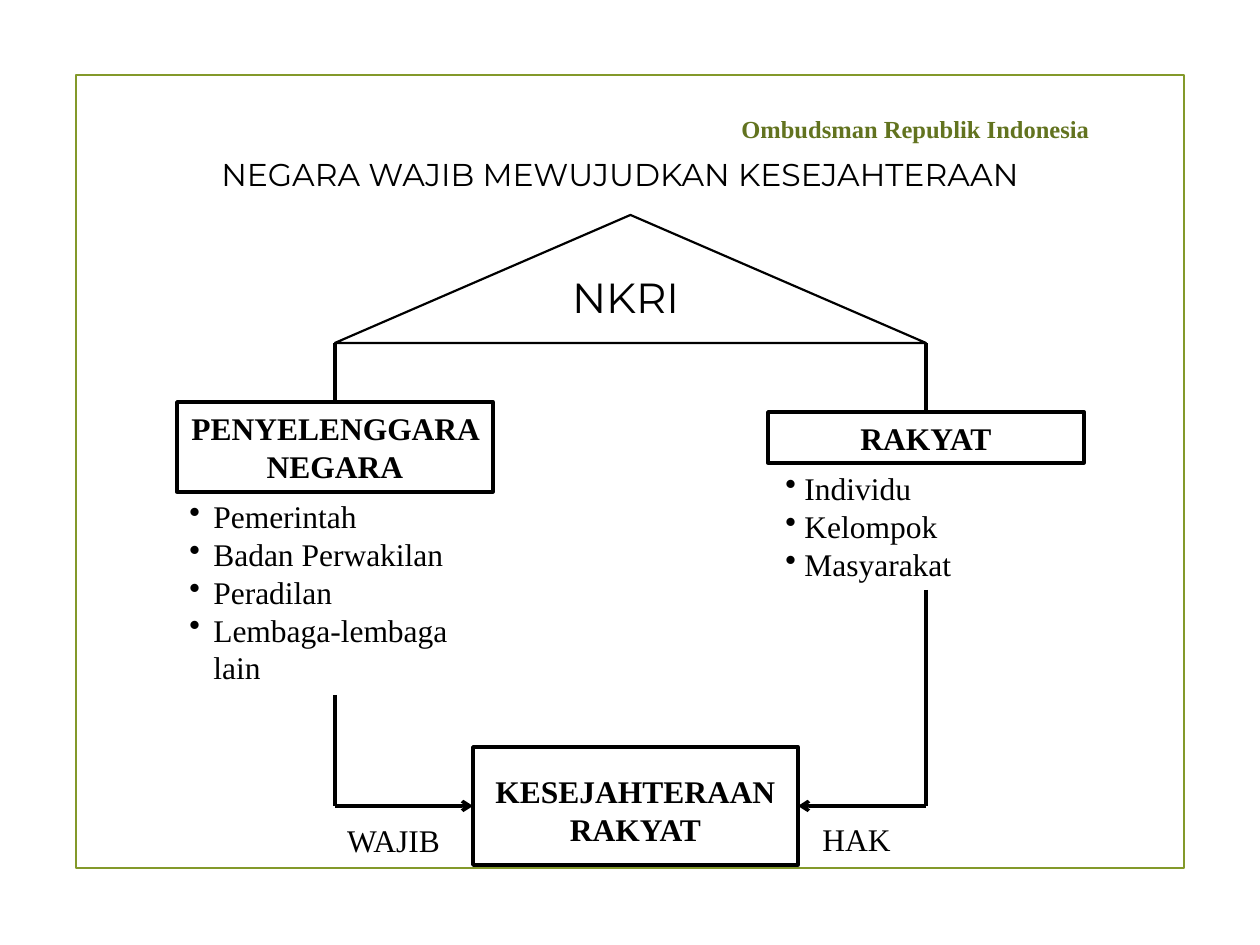
from lxml import etree
from pptx import Presentation
from pptx.dml.color import RGBColor
from pptx.enum.shapes import MSO_CONNECTOR, MSO_SHAPE
from pptx.enum.text import MSO_ANCHOR, PP_ALIGN
from pptx.oxml.ns import qn
from pptx.util import Pt

RECT, ROOF = MSO_SHAPE.RECTANGLE, MSO_SHAPE.ISOSCELES_TRIANGLE
LINE = MSO_CONNECTOR.STRAIGHT
LEFT, MID = PP_ALIGN.LEFT, PP_ALIGN.CENTER
TOP, CENTER = MSO_ANCHOR.TOP, MSO_ANCHOR.MIDDLE
SERIF, SANS = "Times New Roman", "Montserrat"
BLACK, GREEN, OLIVE = "000000", "83992A", "62731F"
EMU = 914400 / 126

FRAME = (76, 75, 1108, 793)
PEAK = (335, 215, 591, 128)
GOAL = (473, 747, 325, 118)
TEXTS = [
    ("Ombudsman Republik Indonesia", (708, 108, 415, 43), 14, SERIF, OLIVE, True),
    ("NEGARA WAJIB MEWUJUDKAN KESEJAHTERAAN", (128, 149, 984, 51), 18, SANS, BLACK, False),
    ("NKRI", (542, 265, 167, 64), 24, SANS, BLACK, False),
    ("WAJIB", (315, 815, 157, 51), 18, SERIF, BLACK, False),
    ("HAK", (787, 814, 139, 51), 18, SERIF, BLACK, False),
    ("KESEJAHTERAAN\vRAKYAT", (473, 766, 325, 90), 18, SERIF, BLACK, True),
]
SIDES = [
    {"head": "PENYELENGGARA NEGARA", "box": (177, 402, 316, 90),
     "items": ["Pemerintah", "Badan Perwakilan", "Peradilan", "Lembaga-lembaga lain"],
     "list": (177, 491, 316, 204), "hang": 24, "x": 335, "port": 1},
    {"head": "RAKYAT", "box": (768, 412, 316, 51),
     "items": ["Individu", "Kelompok", "Masyarakat"],
     "list": (773, 463, 306, 127), "hang": 19, "x": 926, "port": 3},
]


def px(*nums):
    return [round(n * EMU) for n in nums]


def rgb(color):
    return RGBColor.from_string(color)


def write(shape, lines, size=18, font=SERIF, color=BLACK, bold=False, align=MID, hang=0):
    frame = shape.text_frame
    frame.word_wrap = True
    frame.text = "\n".join(lines)
    for para in frame.paragraphs:
        para.alignment = align
        if hang:
            props = para._p.get_or_add_pPr()
            step = px(hang)[0]
            props.set("marL", str(step))
            props.set("indent", str(-step))
            etree.SubElement(props, qn("a:buChar")).set("char", "•")
        for run in para.runs:
            run.font.size = Pt(size)
            run.font.name = font
            run.font.bold = bold
            run.font.color.rgb = rgb(color)


def shape(kind, area, color=BLACK, width=2):
    item = slide.shapes.add_shape(kind, *px(*area))
    item.shadow.inherit = False
    item.fill.background()
    item.line.color.rgb = rgb(color)
    item.line.width = Pt(width)
    item.text_frame.vertical_anchor = CENTER
    return item


def label(area, lines, **style):
    box = slide.shapes.add_textbox(*px(*area))
    box.text_frame.vertical_anchor = TOP
    write(box, lines, **style)
    return box


def line(start, end, arrow=False):
    item = slide.shapes.add_connector(LINE, *px(*start, *end))
    item.line.color.rgb = rgb(BLACK)
    item.line.width = Pt(2)
    if arrow:
        etree.SubElement(item.line._get_or_add_ln(), qn("a:tailEnd")).set("type", "arrow")
    etree.SubElement(item._element.spPr, qn("a:effectLst"))
    return item


deck = Presentation()
deck.slide_width, deck.slide_height = px(1260, 945)
slide = deck.slides.add_slide(deck.slide_layouts[6])

shape(RECT, FRAME, GREEN, 1.25)
shape(ROOF, PEAK, width=1.25)
goal = shape(RECT, GOAL)
for text, area, size, font, color, bold in TEXTS:
    label(area, [text], size=size, font=font, color=color, bold=bold)

base = PEAK[1] + PEAK[3]
turn = GOAL[1] + GOAL[3] // 2
for side in SIDES:
    x, port = side["x"], side["port"]
    box = shape(RECT, side["box"])
    write(box, [side["head"]], bold=True)
    points = label(side["list"], side["items"], align=LEFT, hang=side["hang"])
    foot = side["list"][1] + side["list"][3]
    edge = GOAL[0] if port == 1 else GOAL[0] + GOAL[2]
    line((x, base), (x, side["box"][1])).end_connect(box, 0)
    line((x, foot), (x, turn)).begin_connect(points, 2)
    line((x, turn), (edge, turn), True).end_connect(goal, port)

deck.save("out.pptx")
